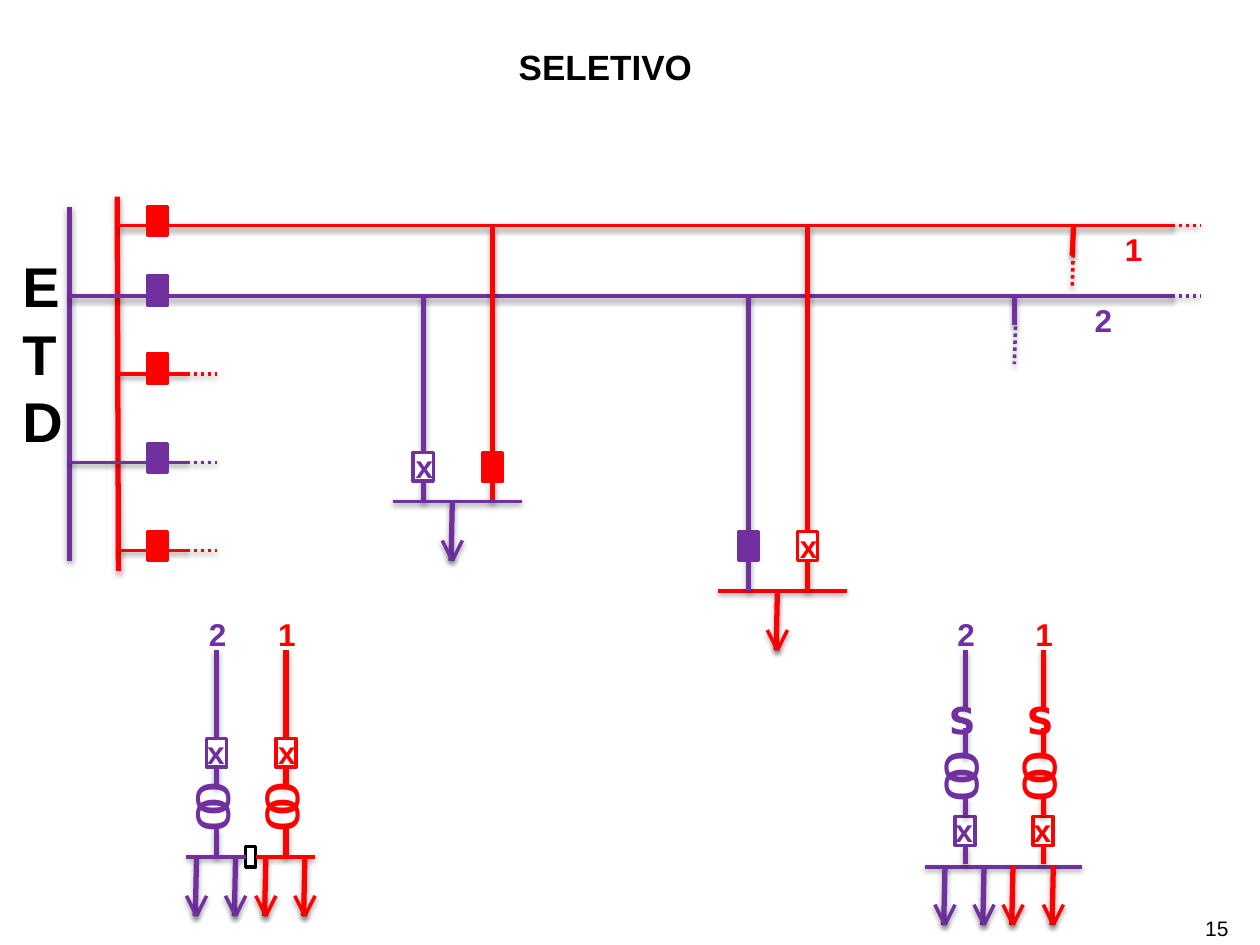
from dataclasses import dataclass

from lxml.etree import SubElement
from pptx import Presentation
from pptx.dml.color import RGBColor
from pptx.enum.dml import MSO_LINE
from pptx.enum.shapes import MSO_CONNECTOR, MSO_SHAPE
from pptx.enum.text import MSO_ANCHOR, MSO_AUTO_SIZE, PP_ALIGN as Align
from pptx.oxml.ns import qn
from pptx.shapes.autoshape import Shape
from pptx.shapes.connector import Connector
from pptx.slide import Slide
from pptx.util import Inches, Pt


@dataclass(frozen=True)
class Theme:
    red: str = "FF0000"
    purple: str = "7030A0"
    black: str = "000000"
    white: str = "FFFFFF"
    font: str = "Arial"
    mono: str = "DejaVu Sans Mono"
    number: int = 12
    label: int = 18
    title: int = 20
    switch: int = 28
    station: int = 32
    coil: int = 36
    thin: int = 2
    thick: int = 3


THEME = Theme()
RED, PURPLE = THEME.red, THEME.purple
BOX_WIDTH, BOX_HEIGHT = 0.16, 0.23
TOP, LEFT, BOTTOM, RIGHT = range(4)


@dataclass(frozen=True)
class Wire:
    x1: float
    y1: float
    x2: float
    y2: float
    color: str
    width: int = THEME.thin
    dotted: bool = False


@dataclass(frozen=True)
class Breaker:
    """A filled box is closed; an open one is white and marked x."""
    x: float
    y: float
    color: str
    is_open: bool = False
    align: Align = Align.LEFT


@dataclass(frozen=True)
class Label:
    text: str
    x: float
    y: float
    width: float
    height: float
    color: str
    size: int = THEME.label
    bold: bool = True
    font: str = THEME.font
    align: Align = Align.LEFT
    rotation: int = 0


def add_shadow(line: Connector, width: int) -> None:
    effects = SubElement(line._element.spPr, qn("a:effectLst"))
    thick = width == THEME.thick
    shadow = SubElement(effects, qn("a:outerShdw"), blurRad="40000",
                        dist="23000" if thick else "20000", dir="5400000", rotWithShape="0")
    color = SubElement(shadow, qn("a:srgbClr"), val=THEME.black)
    SubElement(color, qn("a:alpha"), val="35000" if thick else "38000")


def draw_wire(page: Slide, wire: Wire) -> Connector:
    ends = [Inches(value) for value in (wire.x1, wire.y1, wire.x2, wire.y2)]
    line = page.shapes.add_connector(MSO_CONNECTOR.STRAIGHT, *ends)
    line.line.color.rgb = RGBColor.from_string(wire.color)
    line.line.width = Pt(wire.width)
    if wire.dotted:
        line.line.dash_style = MSO_LINE.ROUND_DOT
    add_shadow(line, wire.width)
    return line


def draw_box(page: Slide, x: float, y: float, width: float, height: float,
             fill: str, outline: str) -> Shape:
    box = page.shapes.add_shape(MSO_SHAPE.RECTANGLE, Inches(x), Inches(y),
                                Inches(width), Inches(height))
    box.shadow.inherit = False
    box.fill.solid()
    box.fill.fore_color.rgb = RGBColor.from_string(fill)
    box.line.color.rgb = RGBColor.from_string(outline)
    box.line.width = Pt(THEME.thin)
    return box


def format_text(box: Shape, label: Label) -> None:
    box.text_frame.text = label.text
    para = box.text_frame.paragraphs[0]
    para.alignment = label.align
    font = para.runs[0].font
    font.name, font.size, font.bold = label.font, Pt(label.size), label.bold
    font.color.rgb = RGBColor.from_string(label.color)


def draw_label(page: Slide, label: Label) -> Shape:
    box = page.shapes.add_textbox(Inches(label.x), Inches(label.y),
                                  Inches(label.width), Inches(label.height))
    box.rotation = label.rotation
    box.text_frame.word_wrap = True
    box.text_frame.auto_size = MSO_AUTO_SIZE.SHAPE_TO_FIT_TEXT
    format_text(box, label)
    return box


def draw_breaker(page: Slide, breaker: Breaker) -> Shape:
    fill = THEME.white if breaker.is_open else breaker.color
    box = draw_box(page, breaker.x, breaker.y, BOX_WIDTH, BOX_HEIGHT, fill, breaker.color)
    if breaker.is_open:
        shift = 0.31 if breaker.align == Align.RIGHT else 0.08
        draw_label(page, Label("x", breaker.x - shift, breaker.y - 0.09, 0.55, 0.4,
                               breaker.color, align=breaker.align))
    return box


def draw_load(page: Slide, x: float, y: float, color: str) -> None:
    """A downward arrow from a bus: stem and two strokes of the head."""
    draw_wire(page, Wire(x, y, x - 0.01, y + 0.47, color, THEME.thick))
    for side in (0.08, -0.08):
        draw_wire(page, Wire(x + side, y + 0.31, x, y + 0.47, color))


def draw_transformer(page: Slide, x: float, y: float, color: str) -> None:
    for drop in (0, 0.13):
        draw_label(page, Label("o", x - 0.17, y + drop, 0.41, 0.71, color,
                               THEME.coil, bold=False, rotation=90))


def draw_feeder_number(page: Slide, text: str, x: float, color: str) -> None:
    draw_label(page, Label(text, x - 0.16, 4.83, 0.63, 0.4, color))


def draw_low_voltage_unit(page: Slide, text: str, x: float, color: str, align: Align) -> None:
    """Feeder, open breaker and transformer, down to the split bus."""
    draw_wire(page, Wire(x, 5.16, x, 6.25, color, THEME.thick))
    draw_breaker(page, Breaker(x - 0.08, 5.86, color, True, align))
    draw_transformer(page, x, 5.95, color)
    draw_wire(page, Wire(x, 6.57, x, 6.8, color, THEME.thick))
    draw_feeder_number(page, text, x, color)


def draw_network_unit(page: Slide, text: str, x: float, color: str) -> None:
    """Feeder, switch, transformer and open breaker, down to the common bus."""
    for start, end in ((5.16, 5.63), (5.78, 6.01)):
        draw_wire(page, Wire(x, start, x, end, color, THEME.thick))
    draw_label(page, Label("s", x - 0.24, 5.39, 0.39, 0.57, color, THEME.switch, font=THEME.mono))
    draw_transformer(page, x, 5.71, color)
    box = draw_breaker(page, Breaker(x - 0.08, 6.48, color, True, Align.RIGHT))
    draw_wire(page, Wire(x, 6.33, x, 6.48, color, THEME.thick)).end_connect(box, BOTTOM - 2)
    draw_wire(page, Wire(x, 6.71, x, 6.86, color, THEME.thick)).begin_connect(box, BOTTOM)
    draw_feeder_number(page, text, x, color)


def draw_split_bus(page: Slide) -> None:
    tie = draw_box(page, 1.95, 6.72, 0.08, 0.16, THEME.white, THEME.black)
    draw_wire(page, Wire(1.48, 6.8, 1.95, 6.8, PURPLE)).end_connect(tie, LEFT)
    draw_wire(page, Wire(2.03, 6.8, 2.5, 6.8, RED)).begin_connect(tie, RIGHT)


STUBS = [(0.94, 2.97, RED), (0.94, 4.37, RED), (0.55, 3.67, PURPLE)]
FEEDERS = [(0.94, 1.79, RED), (0.55, 2.35, PURPLE)]
WIRES = [
    Wire(0.55, 1.64, 0.55, 4.45, PURPLE, THEME.thick),
    Wire(0.93, 1.56, 0.94, 4.53, RED, THEME.thick),
    *(Wire(x, y, 9.3, y, color) for x, y, color in FEEDERS),
    *(Wire(9.3, y, 9.53, y, color, dotted=True) for _, y, color in FEEDERS),
    *(Wire(x, y, 1.48, y, color) for x, y, color in STUBS),
    *(Wire(1.48, y, 1.72, y, color, dotted=True) for _, y, color in STUBS),
    Wire(5.7, 4.69, 6.72, 4.69, RED),
    Wire(3.36, 2.34, 3.36, 3.99, PURPLE, THEME.thick),
    Wire(3.91, 1.8, 3.91, 3.99, RED, THEME.thick),
    Wire(3.12, 3.98, 4.14, 3.98, PURPLE),
    Wire(6.41, 1.8, 6.41, 4.69, RED, THEME.thick),
    Wire(5.94, 2.34, 5.94, 4.69, PURPLE, THEME.thick),
    Wire(8.52, 1.8, 8.51, 2.03, RED, THEME.thick),
    Wire(8.05, 2.34, 8.05, 2.58, PURPLE, THEME.thick),
    Wire(8.52, 1.96, 8.51, 2.27, RED, dotted=True),
    Wire(8.06, 2.59, 8.05, 2.89, PURPLE, dotted=True),
    Wire(7.34, 6.88, 8.59, 6.88, PURPLE),
]
BREAKERS = [
    *(Breaker(1.17, y, RED) for y in (1.64, 2.81, 4.22)),
    *(Breaker(1.17, y, PURPLE) for y in (2.19, 3.52)),
    Breaker(3.83, 3.59, RED), Breaker(3.28, 3.59, PURPLE, True),
    Breaker(5.86, 4.22, PURPLE), Breaker(6.33, 4.22, RED, True),
]
LOADS = [
    (3.59, 3.98, PURPLE), (6.17, 4.69, RED),
    (1.56, 6.8, PURPLE), (1.87, 6.8, PURPLE), (2.11, 6.8, RED), (2.42, 6.8, RED),
    (7.5, 6.87, PURPLE), (7.81, 6.87, PURPLE), (8.04, 6.87, RED), (8.36, 6.87, RED),
]
LABELS = [
    Label("ETD", 0.08, 1.95, 0.31, 1.72, THEME.black, THEME.station),
    Label("1", 8.83, 1.78, 0.63, 0.4, RED),
    Label("2", 8.59, 2.34, 0.63, 0.4, PURPLE),
]


def main() -> None:
    deck = Presentation()
    deck.slide_width, deck.slide_height = Inches(10), Inches(7.5)
    page = deck.slides.add_slide(deck.slide_layouts[5])
    title = page.shapes.title
    title.left, title.top = Inches(0.39), Inches(0.31)
    title.width, title.height = Inches(8.83), Inches(0.44)
    title.text_frame.vertical_anchor = MSO_ANCHOR.TOP
    format_text(title, Label("SELETIVO", 0.39, 0.31, 8.83, 0.44, THEME.black,
                             THEME.title, align=Align.CENTER))
    for wire in WIRES:
        draw_wire(page, wire)
    for breaker in BREAKERS:
        draw_breaker(page, breaker)
    draw_low_voltage_unit(page, "2", 1.72, PURPLE, Align.RIGHT)
    draw_low_voltage_unit(page, "1", 2.27, RED, Align.LEFT)
    draw_split_bus(page)
    draw_network_unit(page, "2", 7.66, PURPLE)
    draw_network_unit(page, "1", 8.28, RED)
    for load in LOADS:
        draw_load(page, *load)
    for label in LABELS:
        draw_label(page, label)
    number = draw_label(page, Label("15", 7.67, 7.27, 2.08, 0.2, THEME.black, THEME.number,
                                    bold=False, align=Align.RIGHT))
    frame = number.text_frame
    frame.margin_left = frame.margin_top = frame.margin_right = frame.margin_bottom = 0
    deck.save("out.pptx")


if __name__ == "__main__":
    main()
